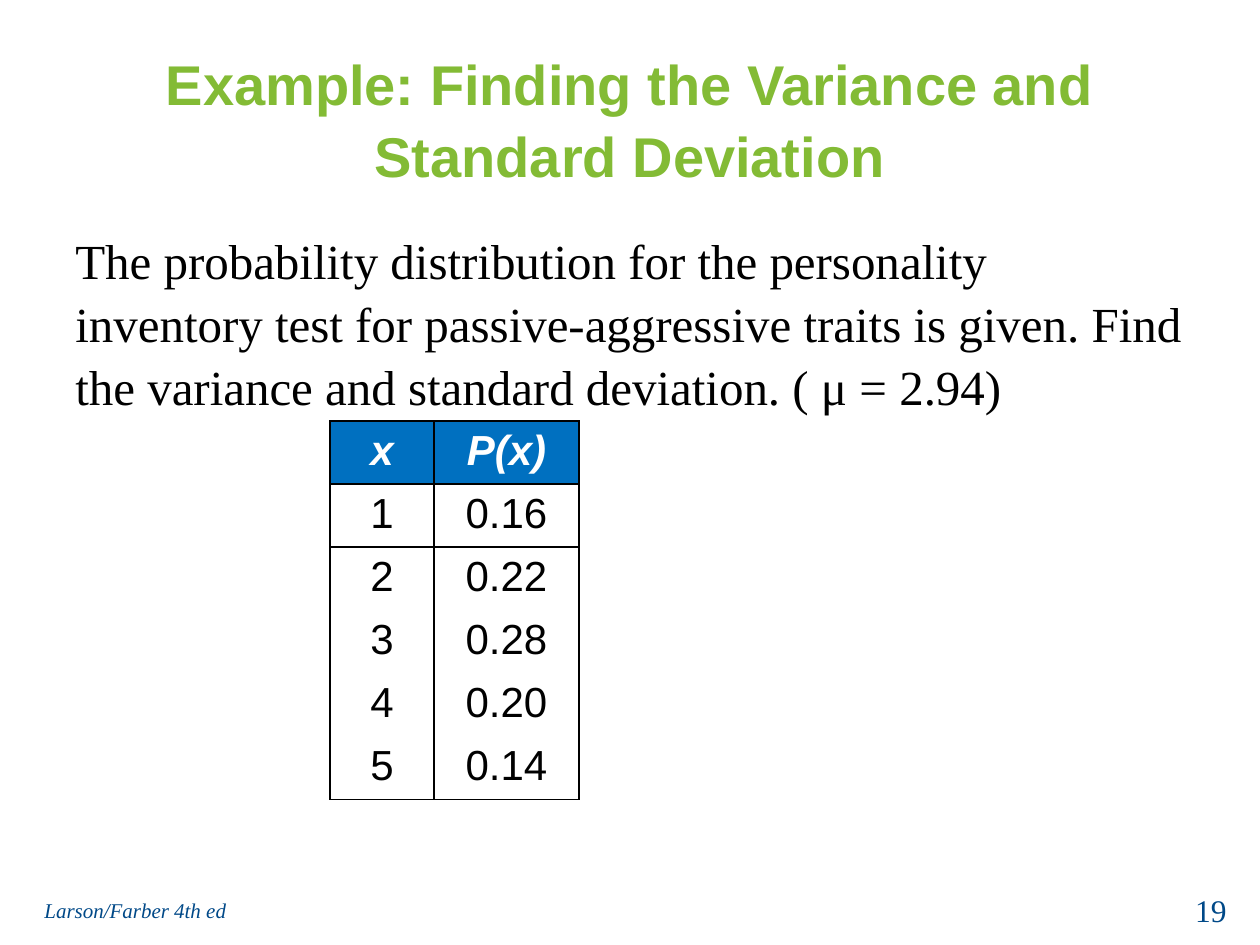
"""Build a slide with a probability distribution table."""
from dataclasses import dataclass, field

from lxml.etree import SubElement
from pptx import Presentation
from pptx.dml.color import RGBColor
from pptx.enum.text import MSO_ANCHOR, PP_ALIGN
from pptx.oxml.ns import qn
from pptx.util import Pt

EMU_PER_PX = 914400 / 126
GREEN = RGBColor(0x83, 0xBB, 0x35)
NAVY = RGBColor(0x00, 0x49, 0x88)
BLUE = RGBColor(0x00, 0x70, 0xC0)
BLACK = RGBColor(0, 0, 0)
WHITE = RGBColor(0xFF, 0xFF, 0xFF)

DISTRIBUTION = [
    ("x", "P(x)"),
    ("1", "0.16"),
    ("2", "0.22"),
    ("3", "0.28"),
    ("4", "0.20"),
    ("5", "0.14"),
]
COLUMN_WIDTHS = (104, 145)
ROW_HEIGHT = 52
RULED_BELOW = {0, 1, len(DISTRIBUTION) - 1}


@dataclass(frozen=True)
class Passage:
    wording: str
    box: tuple[int, int, int, int]
    color: RGBColor
    font: dict
    paragraph: dict = field(default_factory=dict)
    anchor: MSO_ANCHOR = MSO_ANCHOR.TOP


PASSAGES = [
    Passage("Example: Finding the Variance and Standard Deviation",
            (63, 38, 1134, 157), GREEN,
            {"name": "Arial", "size": Pt(32), "bold": True},
            {"alignment": PP_ALIGN.CENTER, "line_spacing": 1.07},
            MSO_ANCHOR.MIDDLE),
    Passage("The probability distribution for the personality inventory test "
            "for passive-aggressive traits is given. Find the variance and "
            "standard deviation. ( μ = 2.94)",
            (63, 220, 1134, 190), BLACK,
            {"name": "Times New Roman", "size": Pt(28)},
            {"line_spacing": 1.07}),
    Passage("19", (945, 885, 294, 50), NAVY,
            {"name": "Times New Roman", "size": Pt(18)},
            {"alignment": PP_ALIGN.RIGHT}),
    Passage("Larson/Farber 4th ed", (32, 885, 399, 50), NAVY,
            {"name": "Times New Roman", "size": Pt(12), "italic": True},
            anchor=MSO_ANCHOR.MIDDLE),
]


def px(length: int) -> int:
    """Turn px into EMU."""
    return round(length * EMU_PER_PX)


def apply(target, values: dict) -> None:
    """Set each named attribute on the target."""
    for name, value in values.items():
        setattr(target, name, value)


def write(paragraph, wording: str, font: dict, color: RGBColor) -> None:
    """Add one formatted run to a paragraph."""
    run = paragraph.add_run()
    run.text = wording
    apply(run.font, font)
    run.font.color.rgb = color


def add_passage(slide, passage: Passage) -> None:
    """Place a wrapped passage of text."""
    frame = slide.shapes.add_textbox(*map(px, passage.box)).text_frame
    apply(frame, {"word_wrap": True, "vertical_anchor": passage.anchor})
    apply(frame.paragraphs[0], passage.paragraph)
    write(frame.paragraphs[0], passage.wording, passage.font, passage.color)


def set_borders(cell, ruled: dict[str, bool]) -> None:
    """Draw a black 1 pt rule on each ruled side and clear the others."""
    properties = cell._tc.get_or_add_tcPr()
    for position, (side, visible) in enumerate(ruled.items()):
        line = SubElement(properties, qn(f"a:ln{side}"), w=str(Pt(1)))
        properties.insert(position, line)
        if visible:
            solid = SubElement(line, qn("a:solidFill"))
            SubElement(solid, qn("a:srgbClr"), val=str(BLACK))
        else:
            SubElement(line, qn("a:noFill"))


def add_distribution(slide) -> None:
    """Draw the table of x and P(x)."""
    table = slide.shapes.add_table(
        len(DISTRIBUTION), len(COLUMN_WIDTHS), px(330), px(421),
        px(sum(COLUMN_WIDTHS)), px(ROW_HEIGHT * len(DISTRIBUTION))).table
    table.horz_banding = False
    for column, width in zip(table.columns, COLUMN_WIDTHS):
        column.width = px(width)
    for index, values in enumerate(DISTRIBUTION):
        heading = index == 0
        font = {"name": "Arial", "size": Pt(24), "bold": heading, "italic": heading}
        for cell, value in zip(table.rows[index].cells, values):
            if heading:
                cell.fill.solid()
                cell.fill.fore_color.rgb = BLUE
            else:
                cell.fill.background()
            paragraph = cell.text_frame.paragraphs[0]
            paragraph.alignment = PP_ALIGN.CENTER
            write(paragraph, value, font, WHITE if heading else BLACK)
            set_borders(cell, {"L": True, "R": True,
                               "T": heading or index - 1 in RULED_BELOW,
                               "B": index in RULED_BELOW})


def main() -> None:
    """Compose and save the slide."""
    presentation = Presentation()
    apply(presentation, {"slide_width": px(1260), "slide_height": px(945)})
    slide = presentation.slides.add_slide(presentation.slide_layouts[6])
    for passage in PASSAGES:
        add_passage(slide, passage)
    add_distribution(slide)
    presentation.save("out.pptx")


if __name__ == "__main__":
    main()
